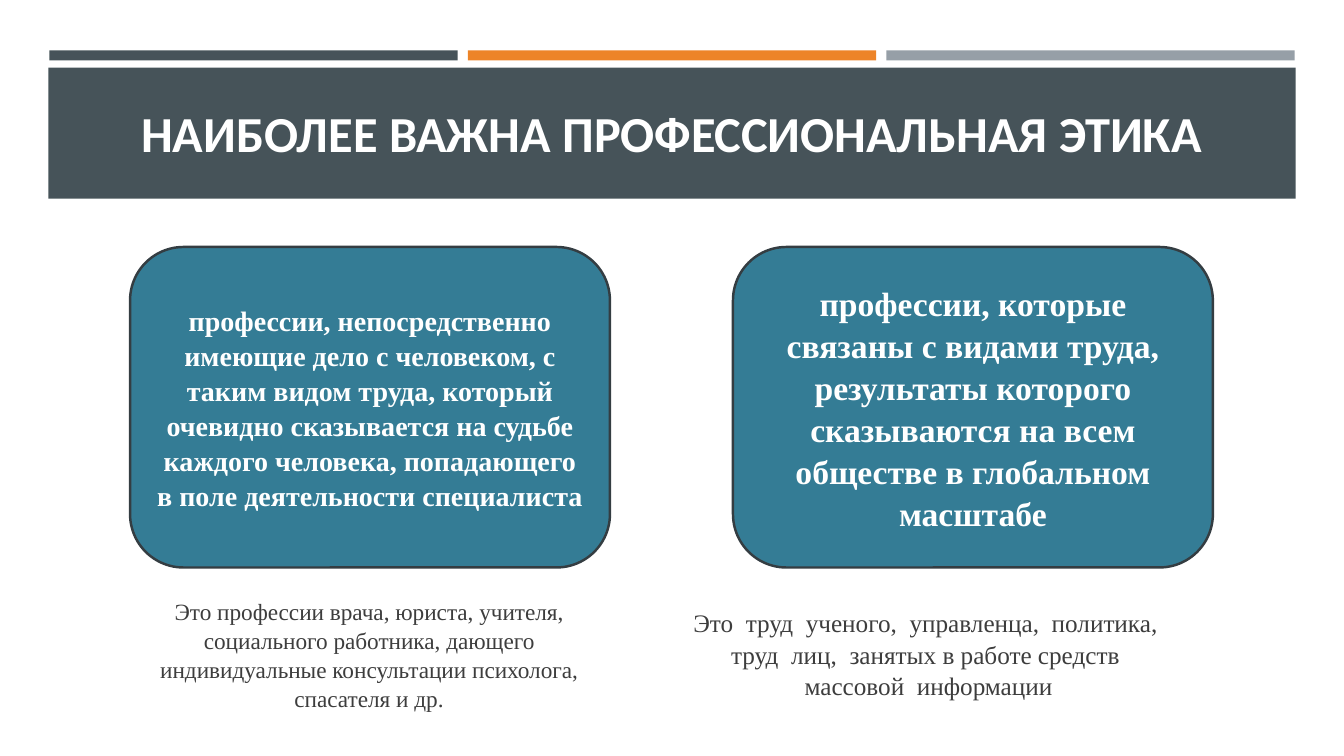
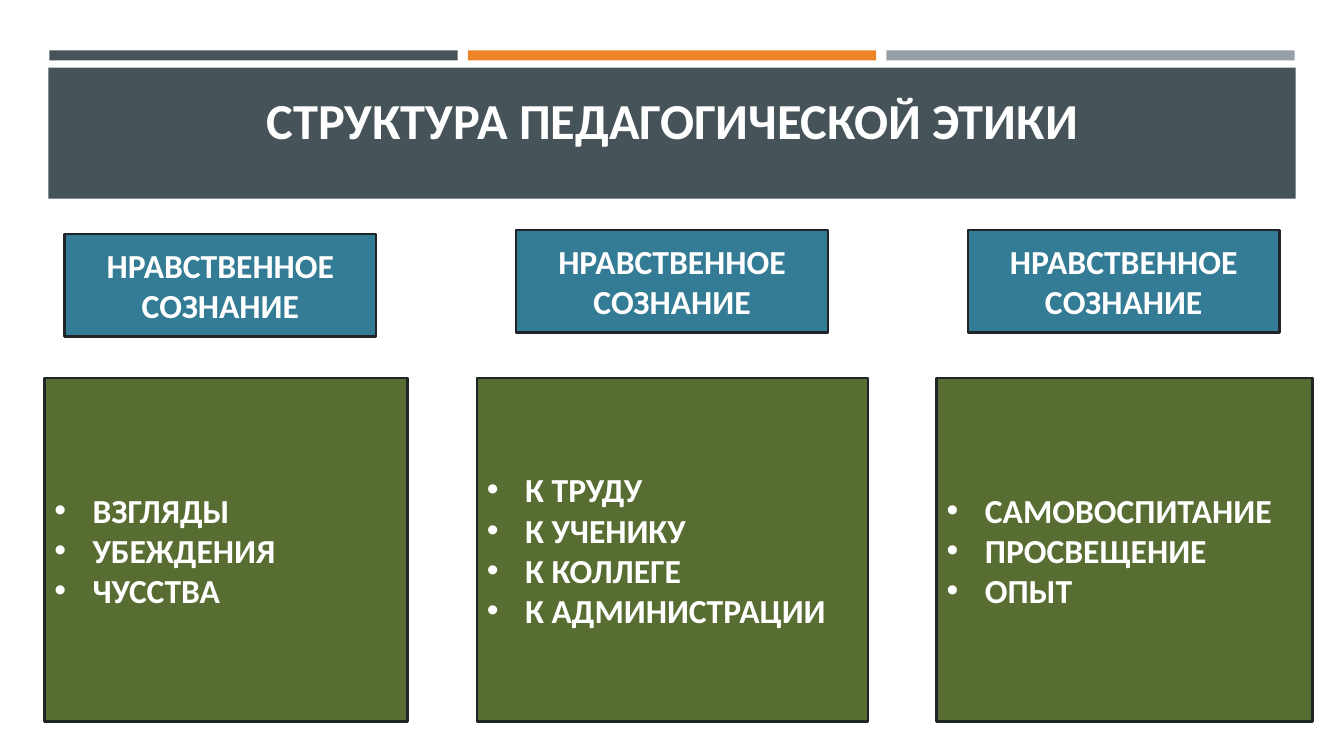
"""Build two slides on professional and pedagogical ethics."""
from dataclasses import dataclass

from lxml import etree
from pptx import Presentation
from pptx.dml.color import RGBColor
from pptx.enum import shapes, text
from pptx.oxml.ns import qn
from pptx.util import Emu, Inches, Pt

SLATE, ORANGE, GREY = "465359", "ED8428", "969FA7"
TEAL, OLIVE, WHITE, INK = "347C95", "586D32", "FFFFFF", "3D3D3D"
SERIF, SANS = "Times New Roman", "Calibri"
ROUNDED_EDGE, SQUARE_EDGE = "343D42", "1F2427"
RECT = shapes.MSO_SHAPE.RECTANGLE
ROUNDED = shapes.MSO_SHAPE.ROUNDED_RECTANGLE


@dataclass(frozen=True)
class Box:
    """Position and size in inches."""
    left: float
    top: float
    width: float
    height: float

    def emu(self) -> tuple[Emu, Emu, Emu, Emu]:
        """Return the four lengths for python-pptx."""
        return Inches(self.left), Inches(self.top), Inches(self.width), Inches(self.height)


@dataclass(frozen=True)
class Profession:
    """A group of professions with its examples."""
    left: float
    description: str
    size: float
    caption_left: float
    examples: str
    caption_size: float


@dataclass(frozen=True)
class Component:
    """A part of pedagogical ethics with its list."""
    heading_top: float
    list_left: float
    list_width: float
    items: tuple[str, ...]


PROFESSIONS = (
    Profession(7.27, "профессии, которые связаны с видами труда, результаты которого "
               "сказываются на всем обществе в глобальном масштабе", 24, 6.67,
               "Это  труд  ученого,  управленца,  политика,  труд  лиц,  занятых "
               "в работе средств  массовой  информации", 18),
    Profession(1.29, "профессии, непосредственно имеющие дело с человеком, с таким видом "
               "труда, который очевидно сказывается на судьбе каждого человека, "
               "попадающего в поле деятельности специалиста", 20, 1.12,
               "Это профессии врача, юриста, учителя, социального работника, дающего "
               "индивидуальные консультации психолога, спасателя и др.", 16.6),
)
COMPONENTS = (
    Component(2.32, 0.44, 3.6, ("ВЗГЛЯДЫ", "УБЕЖДЕНИЯ", "ЧУССТВА")),
    Component(2.28, 4.73, 3.88, ("К ТРУДУ", "К УЧЕНИКУ", "К КОЛЛЕГЕ", "К АДМИНИСТРАЦИИ")),
    Component(2.28, 9.29, 3.73, ("САМОВОСПИТАНИЕ", "ПРОСВЕЩЕНИЕ", "ОПЫТ")),
)


def rgb(value: str) -> RGBColor:
    """Turn a hex string into a colour."""
    return RGBColor.from_string(value)


def add_bullet(paragraph) -> None:
    """Give a paragraph a round bullet with a hanging indent."""
    properties = paragraph._p.get_or_add_pPr()
    indent = Inches(0.38)
    properties.set("marL", str(indent))
    properties.set("indent", str(-indent))
    etree.SubElement(properties, qn("a:buFont"), typeface="Arial")
    etree.SubElement(properties, qn("a:buChar"), char="•")


def write(shape, *lines: str, size: float, font: str = SANS, color: str = WHITE,
          bold: bool = True, anchor=text.MSO_ANCHOR.MIDDLE, align=text.PP_ALIGN.CENTER,
          bullets: bool = False, spacing: float = 1.0, after: float = 0,
          inset: float = 0.1) -> None:
    """Fill a shape with formatted paragraphs."""
    frame = shape.text_frame
    frame.word_wrap = True
    frame.auto_size = text.MSO_AUTO_SIZE.NONE
    frame.vertical_anchor = anchor
    frame.margin_left = frame.margin_right = Inches(inset)
    for index, line in enumerate(lines):
        paragraph = frame.add_paragraph() if index else frame.paragraphs[0]
        paragraph.alignment = align
        paragraph.line_spacing = spacing
        paragraph.space_after = Pt(after)
        if bullets:
            add_bullet(paragraph)
        run = paragraph.add_run()
        run.text = line
        run.font.name, run.font.size, run.font.bold = font, Pt(size), bold
        run.font.color.rgb = rgb(color)


def add_panel(slide, box: Box, fill: str, edge: str | None = None, kind=RECT):
    """Draw a filled shape, with an outline if an edge colour is given."""
    panel = slide.shapes.add_shape(kind, *box.emu())
    panel.shadow.inherit = False
    panel.fill.solid()
    panel.fill.fore_color.rgb = rgb(fill)
    if edge:
        panel.line.color.rgb = rgb(edge)
        panel.line.width = Pt(1.75)
    else:
        panel.line.fill.background()
    return panel


def add_titled_slide(deck, heading: str, box: Box):
    """Add a slide with the shared bands and its title."""
    slide = deck.slides.add_slide(deck.slide_layouts[5])
    for column, color in enumerate((SLATE, ORANGE, GREY)):
        add_panel(slide, Box(0.49 + column * 4.15, 0.5, 4.05, 0.1), color)
    add_panel(slide, Box(0.48, 0.67, 12.37, 1.3), SLATE)
    title = slide.shapes.title
    title.left, title.top, title.width, title.height = box.emu()
    write(title, heading, size=36, anchor=text.MSO_ANCHOR.BOTTOM)
    slide.shapes.element.append(title.element)
    return slide


def build_professions(deck) -> None:
    """Build the slide on professional ethics."""
    slide = add_titled_slide(deck, "НАИБОЛЕЕ ВАЖНА ПРОФЕССИОНАЛЬНАЯ ЭТИКА",
                             Box(1.01, 0.77, 11.31, 0.89))
    for group in PROFESSIONS:
        card = add_panel(slide, Box(group.left, 2.45, 4.76, 3.18), TEAL, ROUNDED_EDGE, ROUNDED)
        write(card, group.description, size=group.size, font=SERIF, spacing=1.04)
        caption = slide.shapes.add_textbox(*Box(group.caption_left, 5.93, 5.08, 1.11).emu())
        write(caption, group.examples, size=group.caption_size, font=SERIF, color=INK,
              bold=False, spacing=1.04, after=6, inset=0.2)


def build_structure(deck) -> None:
    """Build the slide on the structure of pedagogical ethics."""
    slide = add_titled_slide(deck, "СТРУКТУРА ПЕДАГОГИЧЕСКОЙ ЭТИКИ",
                             Box(0.64, 0.77, 12.06, 0.76))
    for column, part in enumerate(COMPONENTS):
        heading = add_panel(slide, Box(0.64 + column * 4.48, part.heading_top, 3.09, 1.02),
                            TEAL, SQUARE_EDGE)
        write(heading, "НРАВСТВЕННОЕ СОЗНАНИЕ", size=24)
        listing = add_panel(slide, Box(part.list_left, 3.75, part.list_width, 3.41),
                            OLIVE, SQUARE_EDGE)
        write(listing, *part.items, size=24, align=text.PP_ALIGN.JUSTIFY, bullets=True)


def main() -> None:
    """Create and save the presentation."""
    deck = Presentation()
    deck.slide_width, deck.slide_height = Inches(13.33), Inches(7.5)
    build_professions(deck)
    build_structure(deck)
    deck.save("out.pptx")


if __name__ == "__main__":
    main()
